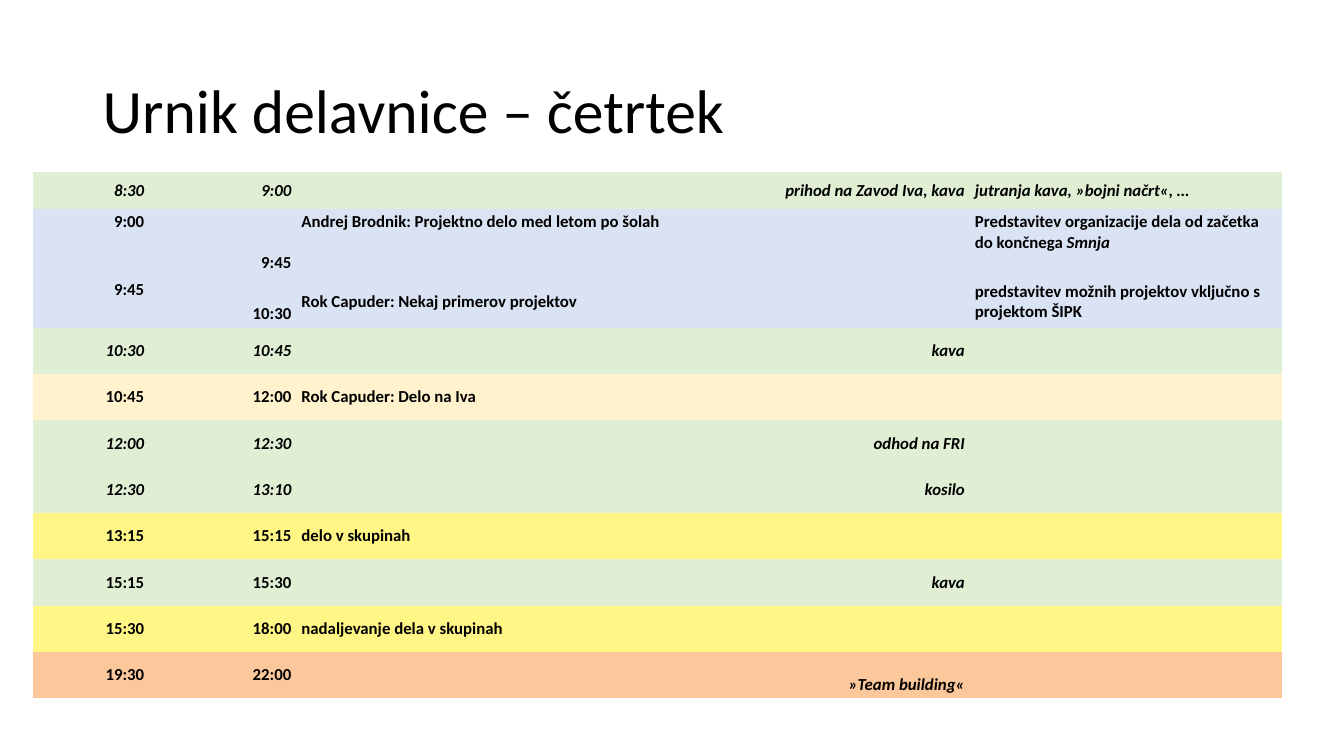
from pptx import Presentation
from pptx.dml.color import RGBColor
from pptx.enum.text import MSO_ANCHOR as Anchor, PP_ALIGN as Align
from pptx.oxml.ns import qn
from pptx.util import Inches, Pt

COLORS = {
    "text": "000000",
    "break": "E0EFD4",
    "talk": "DAE3F3",
    "visit": "FFF2CC",
    "group": "FFF685",
    "evening": "FCC79B",
}
FONT = "Calibri"
NO_STYLE_NO_GRID = "{2D5ABB26-0587-4C30-8999-92F81FD0307C}"
MIDDLE, TOP, BOTTOM = Anchor.MIDDLE, Anchor.TOP, Anchor.BOTTOM


def style_run(run, size, bold=False, italic=False):
    run.font.name = FONT
    run.font.size = Pt(size)
    run.font.bold = bold
    run.font.italic = italic
    run.font.color.rgb = RGBColor.from_string(COLORS["text"])


prs = Presentation()
prs.slide_width, prs.slide_height = Inches(13.33), Inches(7.5)
slide = prs.slides.add_slide(prs.slide_layouts[6])

# Title
title = slide.shapes.add_textbox(Inches(0.92), Inches(0.4), Inches(11.5), Inches(1.45)).text_frame
title.word_wrap = True
title.vertical_anchor = MIDDLE
title.text = "Urnik delavnice – četrtek"
title.paragraphs[0].line_spacing = 0.9
style_run(title.paragraphs[0].runs[0], 44)

# Schedule: kind, italic times, start, end, activity, description
schedule = [
    ("break", True, "8:30", "9:00", "prihod na Zavod Iva, kava", "jutranja kava, »bojni načrt«, …"),
    ("talk", False, "9:00", "9:45", "Andrej Brodnik: Projektno delo med letom po šolah",
     "Predstavitev organizacije dela od začetka do končnega "),
    ("talk", False, "9:45", "10:30", "Rok Capuder: Nekaj primerov projektov",
     "predstavitev možnih projektov vključno s projektom ŠIPK"),
    ("break", True, "10:30", "10:45", "kava", ""),
    ("visit", False, "10:45", "12:00", "Rok Capuder: Delo na Iva", ""),
    ("break", True, "12:00", "12:30", "odhod na FRI", ""),
    ("break", True, "12:30", "13:10", "kosilo", ""),
    ("group", False, "13:15", "15:15", "delo v skupinah", ""),
    ("break", False, "15:15", "15:30", "kava", ""),
    ("group", False, "15:30", "18:00", "nadaljevanje dela v skupinah", ""),
    ("evening", False, "19:30", "22:00", "»Team building«", ""),
]
# Rows whose cells are not all centred vertically
row_anchors = {
    1: (TOP, BOTTOM, TOP, TOP),
    2: (TOP, BOTTOM, MIDDLE, MIDDLE),
    10: (MIDDLE, MIDDLE, BOTTOM, MIDDLE),
}
column_widths = [1.15, 1.46, 6.68, 3.1]
row_heights = [0.36, 0.67, 0.51] + [0.46] * 8

timetable_frame = slide.shapes.add_table(
    len(schedule), len(column_widths), Inches(0.33), Inches(1.71),
    Inches(sum(column_widths)), Inches(sum(row_heights)))
timetable = timetable_frame.table
timetable.first_row = timetable.horz_banding = False
for style_id in timetable_frame.element.iter(qn("a:tableStyleId")):
    style_id.text = NO_STYLE_NO_GRID
for column, width in zip(timetable.columns, column_widths):
    column.width = Inches(width)

for r, (kind, italic_times, *texts) in enumerate(schedule):
    timetable.rows[r].height = Inches(row_heights[r])
    pause = kind in ("break", "evening")
    italics = (italic_times, italic_times, pause, pause)
    aligns = (Align.RIGHT, Align.RIGHT, Align.RIGHT if pause else Align.LEFT, Align.LEFT)
    anchors = row_anchors.get(r, (MIDDLE,) * 4)
    for c, text in enumerate(texts):
        cell = timetable.cell(r, c)
        cell.fill.solid()
        cell.fill.fore_color.rgb = RGBColor.from_string(COLORS[kind])
        cell.margin_left = cell.margin_right = Inches(0.05)
        cell.margin_top = cell.margin_bottom = Inches(0.03)
        cell.vertical_anchor = anchors[c]
        if text:
            cell.text_frame.text = text
            paragraph = cell.text_frame.paragraphs[0]
            paragraph.alignment = aligns[c]
            style_run(paragraph.runs[0], 12, bold=True, italic=italics[c])

# Event name in italics at the end of the first talk's description
event = timetable.cell(1, 3).text_frame.paragraphs[0].add_run()
event.text = "Smnja"
style_run(event, 12, bold=True, italic=True)

prs.save("out.pptx")
